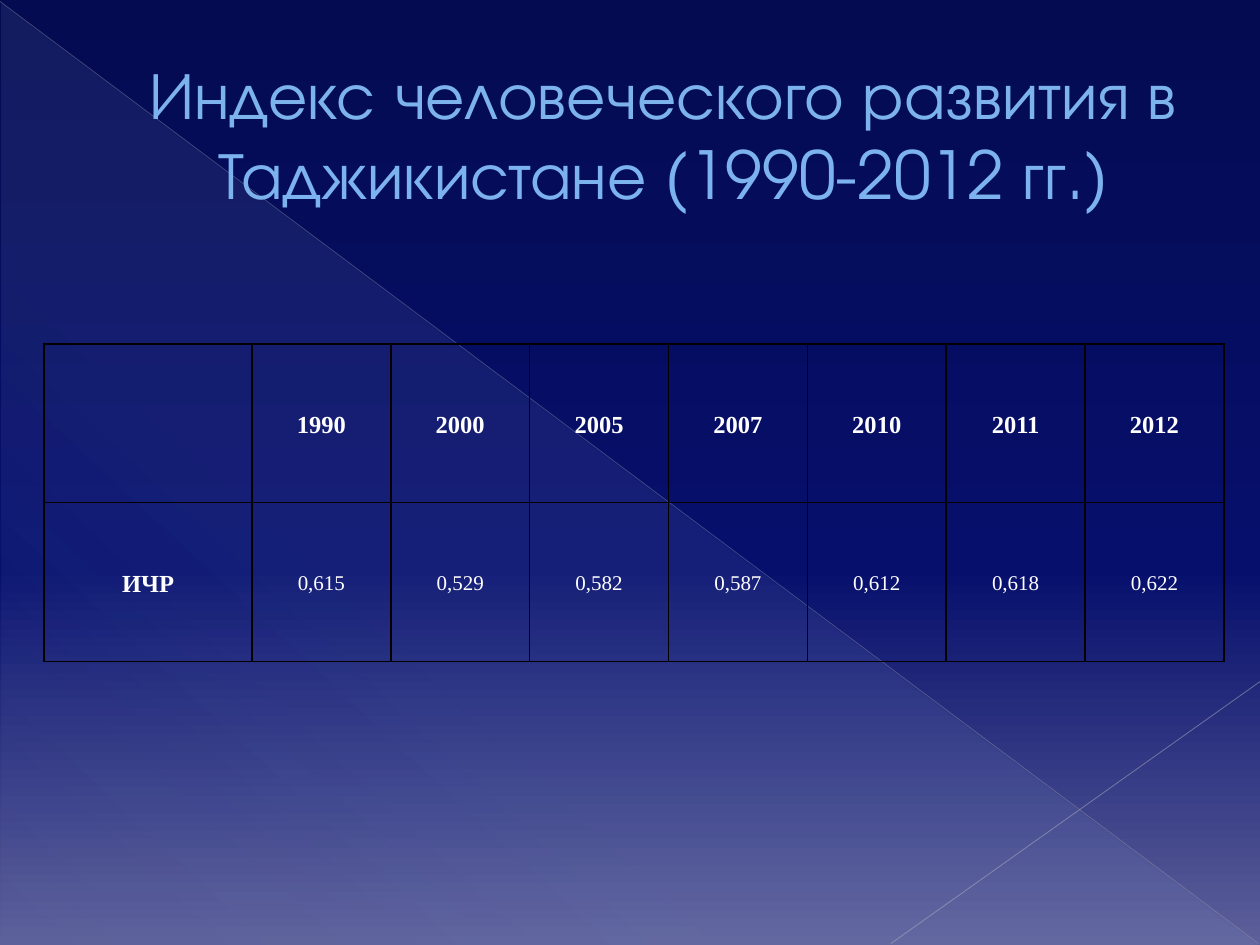
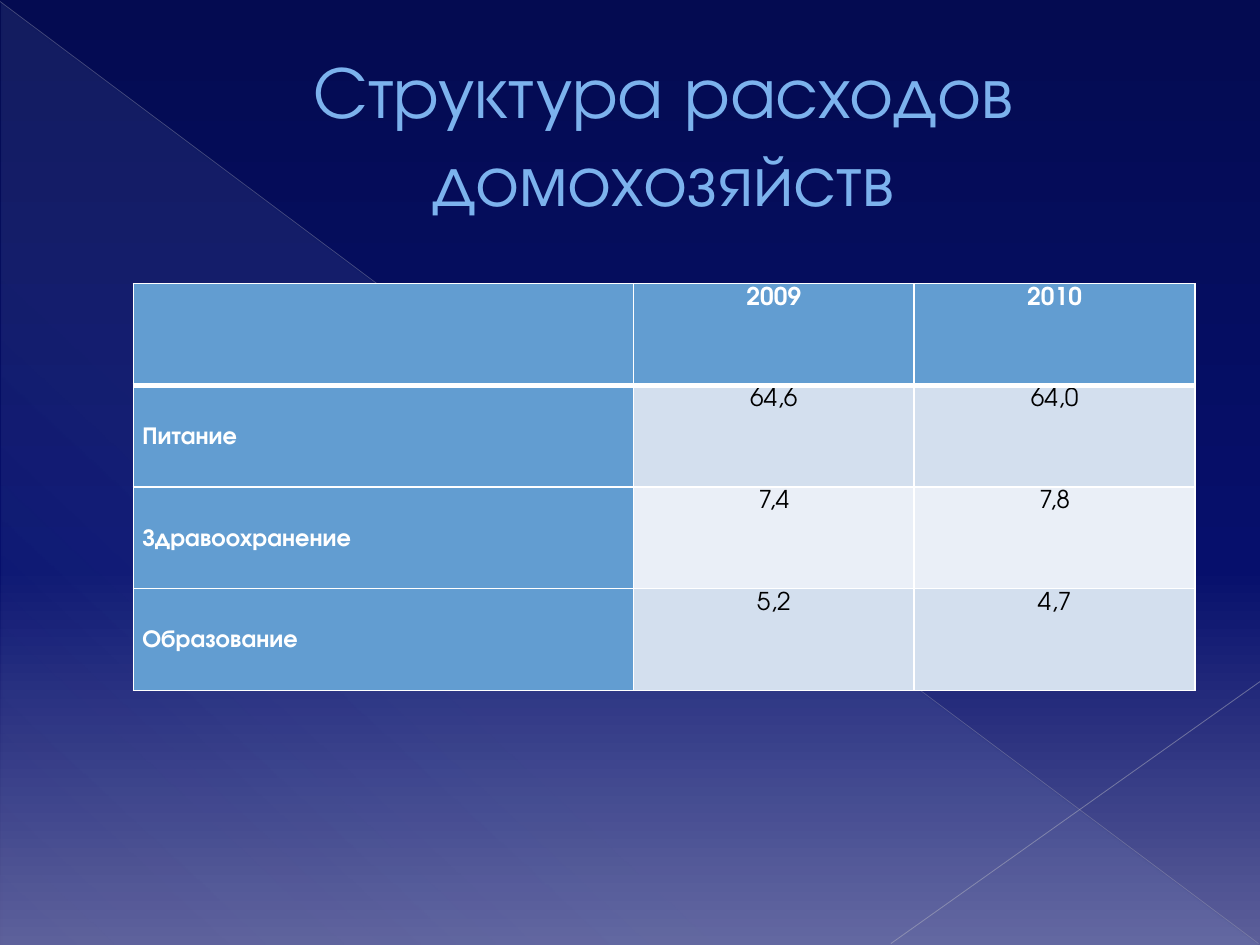
from pptx import Presentation
from pptx.dml.color import RGBColor
from pptx.enum.shapes import MSO_CONNECTOR, MSO_SHAPE, PP_PLACEHOLDER
from pptx.enum.text import MSO_ANCHOR, MSO_AUTO_SIZE, PP_ALIGN
from pptx.oxml import parse_xml
from pptx.oxml.ns import nsdecls, qn
from pptx.util import Cm, Pt

TRIANGLE = MSO_SHAPE.RIGHT_TRIANGLE
STRAIGHT = MSO_CONNECTOR.STRAIGHT
TITLE = PP_PLACEHOLDER.TITLE
LEFT, CENTER = PP_ALIGN.LEFT, PP_ALIGN.CENTER
TOP, MIDDLE = MSO_ANCHOR.TOP, MSO_ANCHOR.MIDDLE
NO_FIT = MSO_AUTO_SIZE.NONE

TITLE_ONLY = 5
SANS = "TeX Gyre Adventor"
SERIF = "Times New Roman"
WHITE, BLACK = "FFFFFF", "000000"
SKY, SKY_EDGE = "7CB2ED", "446D91"
HAZE = "ACCBF9"
BLUE, PALE, PALER = "629DD1", "D3DFEE", "EAEFF7"
BACKDROP = [(0, "040B51", 100), (60, "060F6C", 100), (100, "5C5F99", 100)]
VEIL = [(0, HAZE, 10), (70, HAZE, 8), (100, HAZE, 1)]

HDI_BY_YEAR = {
    "1990": "0,615", "2000": "0,529", "2005": "0,582", "2007": "0,587",
    "2010": "0,612", "2011": "0,618", "2012": "0,622",
}
SPENDING = [
    ["", "2009", "2010"],
    ["Питание", "64,6", "64,0"],
    ["Здравоохранение", "7,4", "7,8"],
    ["Образование", "5,2", "4,7"],
]


def color(value):
    return RGBColor.from_string(value)


def apply(target, formats):
    for name, value in formats.items():
        setattr(target, name, value)


def line_xml(tag, value, width):
    return parse_xml(
        f'<a:{tag} {nsdecls("a")} w="{Pt(width)}"><a:solidFill>'
        f'<a:srgbClr val="{value}"/></a:solidFill></a:{tag}>'
    )


def set_gradient(element, stops, angle):
    marks = "".join(
        f'<a:gs pos="{place * 1000}"><a:srgbClr val="{value}">'
        f'<a:alpha val="{opacity * 1000}"/></a:srgbClr></a:gs>'
        for place, value, opacity in stops
    )
    old = element.find(".//" + qn("a:gradFill"))
    old.getparent().replace(old, parse_xml(
        f'<a:gradFill {nsdecls("a")} rotWithShape="1"><a:gsLst>{marks}</a:gsLst>'
        f'<a:lin ang="{angle * 60000}" scaled="0"/></a:gradFill>'
    ))


class Slides:
    def __init__(self):
        self.deck = Presentation()
        self.deck.slide_width, self.deck.slide_height = Cm(25.4), Cm(19.05)
        self.layout = self.deck.slide_layouts[TITLE_ONLY]
        for holder in list(self.layout.placeholders):
            if holder.placeholder_format.type != TITLE:
                holder.element.getparent().remove(holder.element)
        master = self.deck.slide_master
        master.background.fill.gradient()
        set_gradient(master.element, BACKDROP, 90)
        self.page = None

    def add_page(self, text, size):
        self.page = self.deck.slides.add_slide(self.layout)
        self.title(text, size)

    def decorate_layout(self):
        decorations = [
            self.veil(),
            self.line((0, 0.03), (25.37, 19.02), "B2B3BE", 0.39, 35),
            self.line((25.4, 13.74), (17.96, 19.02), "BBBCC5", 0.47, 45),
        ]
        for shape in decorations:
            self.layout.shapes.element.append(shape.element)

    def veil(self):
        shape = self.page.shapes.add_shape(
            TRIANGLE, Cm(0.03), Cm(0.05), Cm(25.35), Cm(19))
        shape.shadow.inherit = False
        shape.line.fill.background()
        shape.fill.gradient()
        set_gradient(shape.element, VEIL, 133)
        return shape

    def line(self, start, end, value, width, opacity):
        line = self.page.shapes.add_connector(
            STRAIGHT, *(Cm(length) for length in (*start, *end)))
        line.line.color.rgb = color(value)
        line.line.width = Pt(width)
        line.element.find(".//" + qn("a:srgbClr")).append(
            parse_xml(f'<a:alpha {nsdecls("a")} val="{opacity * 1000}"/>'))
        line.element.spPr.append(parse_xml(f'<a:effectLst {nsdecls("a")}/>'))
        return line

    def text(self, frame, words, align, font, value):
        para = frame.paragraphs[0]
        para.alignment = align
        span = para.add_run()
        span.text = words
        apply(span.font, font)
        span.font.color.rgb = color(value)
        return para

    def title(self, words, size):
        box = self.page.shapes.title
        apply(box, {"left": Cm(1.27), "top": Cm(0.74),
                    "width": Cm(22.86), "height": Cm(3.89)})
        apply(box.text_frame, {"word_wrap": True, "auto_size": NO_FIT,
                               "vertical_anchor": MIDDLE})
        self.text(box.text_frame, words, CENTER,
                  {"name": SANS, "size": Pt(size)}, SKY)
        indent = box.element.find(".//" + qn("a:pPr"))
        indent.set("marL", str(Cm(1.35)))
        indent.set("indent", "0")
        box.element.find(".//" + qn("a:rPr")).insert(
            0, line_xml("ln", SKY_EDGE, 0.5))

    def table(self, left, top, widths, row_height, rows, look):
        frame = self.page.shapes.add_table(
            len(rows), len(widths), Cm(left), Cm(top),
            Cm(sum(widths)), Cm(row_height * len(rows)))
        table = frame.table
        apply(table, {"first_row": False, "horz_banding": False})
        for column, width in zip(table.columns, widths):
            column.width = Cm(width)
        for row_index, texts in enumerate(rows):
            table.rows[row_index].height = Cm(row_height)
            for column_index, words in enumerate(texts):
                self.cell(table.cell(row_index, column_index), words,
                          look(row_index, column_index))

    def cell(self, cell, words, look):
        apply(cell, {"margin_left": Cm(0.18), "margin_right": Cm(0.18),
                     "margin_top": 0, "margin_bottom": 0,
                     "vertical_anchor": look["anchor"]})
        if look["fill"]:
            cell.fill.solid()
            cell.fill.fore_color.rgb = color(look["fill"])
        else:
            cell.fill.background()
        properties = cell._tc.get_or_add_tcPr()
        for place, (side, width) in enumerate(zip("LRTB", look["borders"])):
            properties.insert(place, line_xml("ln" + side, look["edge"], width))
        if words:
            para = self.text(cell.text_frame, words, look["align"],
                             look["font"], look["color"])
            para.line_spacing = 1.15


def hdi_look(row, column):
    heading = row == 0 or column == 0
    return {
        "fill": None, "edge": BLACK, "borders": (1, 1, 1, 1),
        "anchor": MIDDLE, "align": CENTER, "color": WHITE,
        "font": {"name": SERIF, "size": Pt(14 if heading else 12), "bold": heading},
    }


def spending_look(row, column):
    heading = row == 0 or column == 0
    label = row > 0 and column == 0
    return {
        "fill": BLUE if heading else (PALER, PALE)[row % 2],
        "edge": WHITE,
        "borders": (1, 1, 3 if row == 1 else 1, 3 if row == 0 else 1),
        "anchor": MIDDLE if label else TOP,
        "align": LEFT if label else CENTER,
        "color": WHITE if heading else BLACK,
        "font": {"name": SANS, "size": Pt(14), "bold": heading},
    }


def main():
    slides = Slides()
    slides.add_page("Индекс человеческого развития в Таджикистане (1990-2012 гг.)", 37.8)
    slides.decorate_layout()
    slides.table(0.89, 6.93, [4.19] + [2.8] * len(HDI_BY_YEAR), 3.2,
                 [["", *HDI_BY_YEAR], ["ИЧР", *HDI_BY_YEAR.values()]], hdi_look)
    slides.add_page("Структура расходов домохозяйств", 42)
    slides.table(2.69, 5.72, [10.08, 5.66, 5.66], 2.05, SPENDING, spending_look)
    slides.deck.save("out.pptx")


if __name__ == "__main__":
    main()
